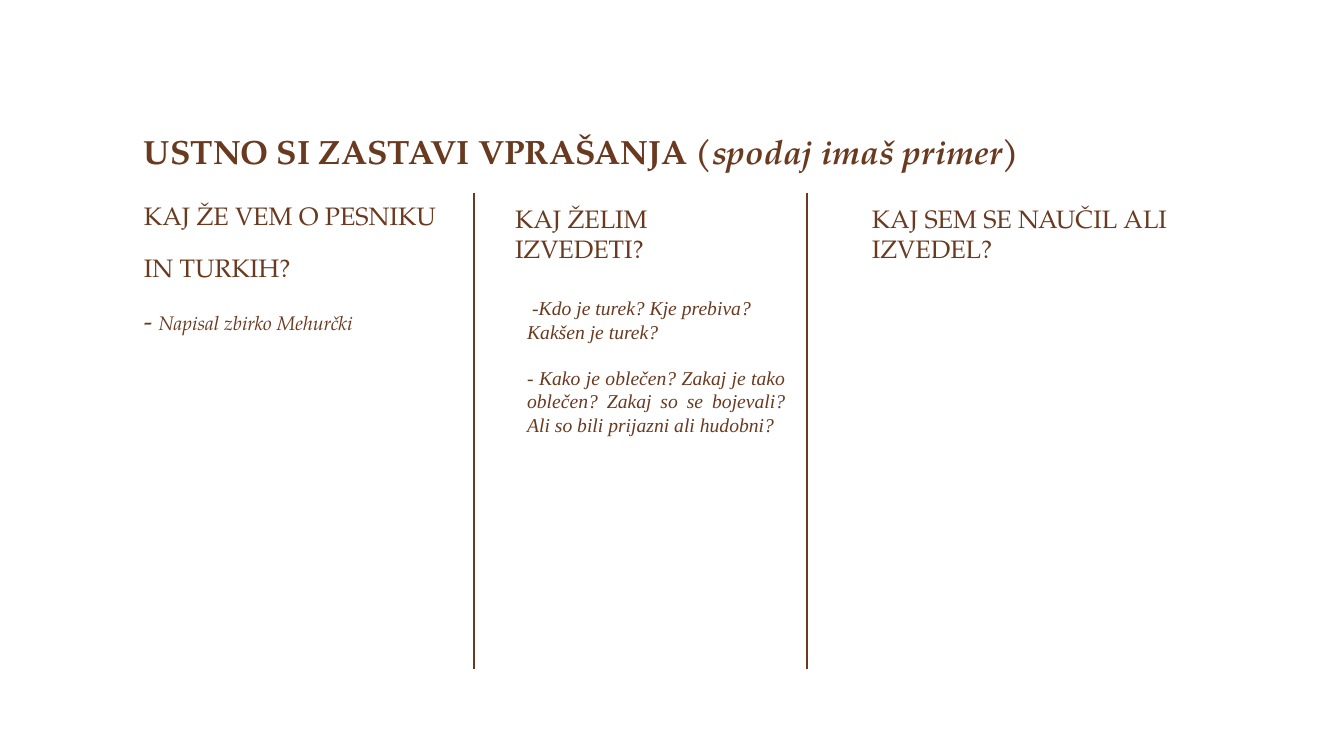
from lxml.etree import SubElement
from pptx import Presentation
from pptx.dml.color import RGBColor
from pptx.enum.shapes import MSO_CONNECTOR
from pptx.enum.text import MSO_ANCHOR, PP_ALIGN
from pptx.oxml.ns import qn
from pptx.util import Inches, Pt

BROWN = RGBColor(0x6A, 0x3A, 0x20)
HEADING_FONT = "TeX Gyre Pagella"
QUESTION_FONT = "Times New Roman"
LEFT, WIDTH = 1.33, 10.66
COLUMN_TOP, COLUMN_BOTTOM = 1.97, 6.64


def add_text_frame(slide, box, anchor=MSO_ANCHOR.TOP):
    frame = slide.shapes.add_textbox(*map(Inches, box)).text_frame
    frame.word_wrap = True
    frame.vertical_anchor = anchor
    return frame


def style(font, size, name=HEADING_FONT, bold=False, italic=False):
    font.size, font.name = Pt(size), name
    font.bold, font.italic = bold, italic
    font.color.rgb = BROWN


def add_title(slide, box):
    title = add_text_frame(slide, box, MSO_ANCHOR.BOTTOM).paragraphs[0]
    for words, italic in (("USTNO SI ZASTAVI VPRAŠANJA ", False),
                          ("(spodaj imaš primer)", True)):
        run = title.add_run()
        run.text = words
        style(run.font, 24, bold=True, italic=italic)


def add_known_facts(slide, box):
    frame = add_text_frame(slide, box)
    lines = (
        [("KAJ ŽE VEM O PESNIKU", 18, False)],
        [("IN TURKIH?", 18, False)],
        [("- ", 18, False), ("Napisal zbirko Mehurčki", 14, True)],
    )
    for index, line in enumerate(lines):
        paragraph = frame.add_paragraph() if index else frame.paragraphs[0]
        paragraph.line_spacing = 0.9
        if index:
            paragraph.space_before = Pt(18)
        for words, size, italic in line:
            run = paragraph.add_run()
            run.text = words
            style(run.font, size, italic=italic)


def add_heading(slide, box, words):
    heading = add_text_frame(slide, box).paragraphs[0]
    heading.text = words
    style(heading.font, 18)


def add_questions(slide, box):
    frame = add_text_frame(slide, box)
    who = frame.paragraphs[0]
    who.text = "-Kdo je turek? Kje prebiva? Kakšen je turek?"
    who.alignment = PP_ALIGN.LEFT
    # First line starts slightly further in
    who._p.get_or_add_pPr().set("indent", str(Inches(0.05)))
    clothing = frame.add_paragraph()
    clothing.text = ("- Kako je oblečen? Zakaj je tako oblečen? "
                     "Zakaj so se bojevali? Ali so bili prijazni ali hudobni?")
    clothing.alignment = PP_ALIGN.JUSTIFY
    clothing.space_before = Pt(16)
    for paragraph in frame.paragraphs:
        style(paragraph.font, 14, QUESTION_FONT, italic=True)


def add_divider(slide, x, top, bottom):
    divider = slide.shapes.add_connector(
        MSO_CONNECTOR.STRAIGHT, *map(Inches, (x, top, x, bottom)))
    divider.line.color.rgb = BROWN
    divider.line.width = Pt(1.5)
    SubElement(divider._element.spPr, qn("a:effectLst"))


def main():
    presentation = Presentation()
    presentation.slide_width = Inches(13.33)
    presentation.slide_height = Inches(7.5)
    slide = presentation.slides.add_slide(presentation.slide_layouts[6])

    add_title(slide, (LEFT, 0.47, WIDTH, 1.28))

    # Three columns: known, wanted, learned
    add_known_facts(slide, (LEFT, COLUMN_TOP, 3.3, COLUMN_BOTTOM - COLUMN_TOP))
    add_heading(slide, (5.01, COLUMN_TOP, 2.76, 0.71), "KAJ ŽELIM IZVEDETI?")
    add_questions(slide, (5.13, 2.89, 2.76, 1.53))
    add_heading(slide, (8.55, COLUMN_TOP, 3.44, 0.71),
                "KAJ SEM SE NAUČIL ALI IZVEDEL?")

    # Column dividers
    for x in (4.7, 8):
        add_divider(slide, x, 1.91, COLUMN_BOTTOM)

    presentation.save("out.pptx")


if __name__ == "__main__":
    main()
